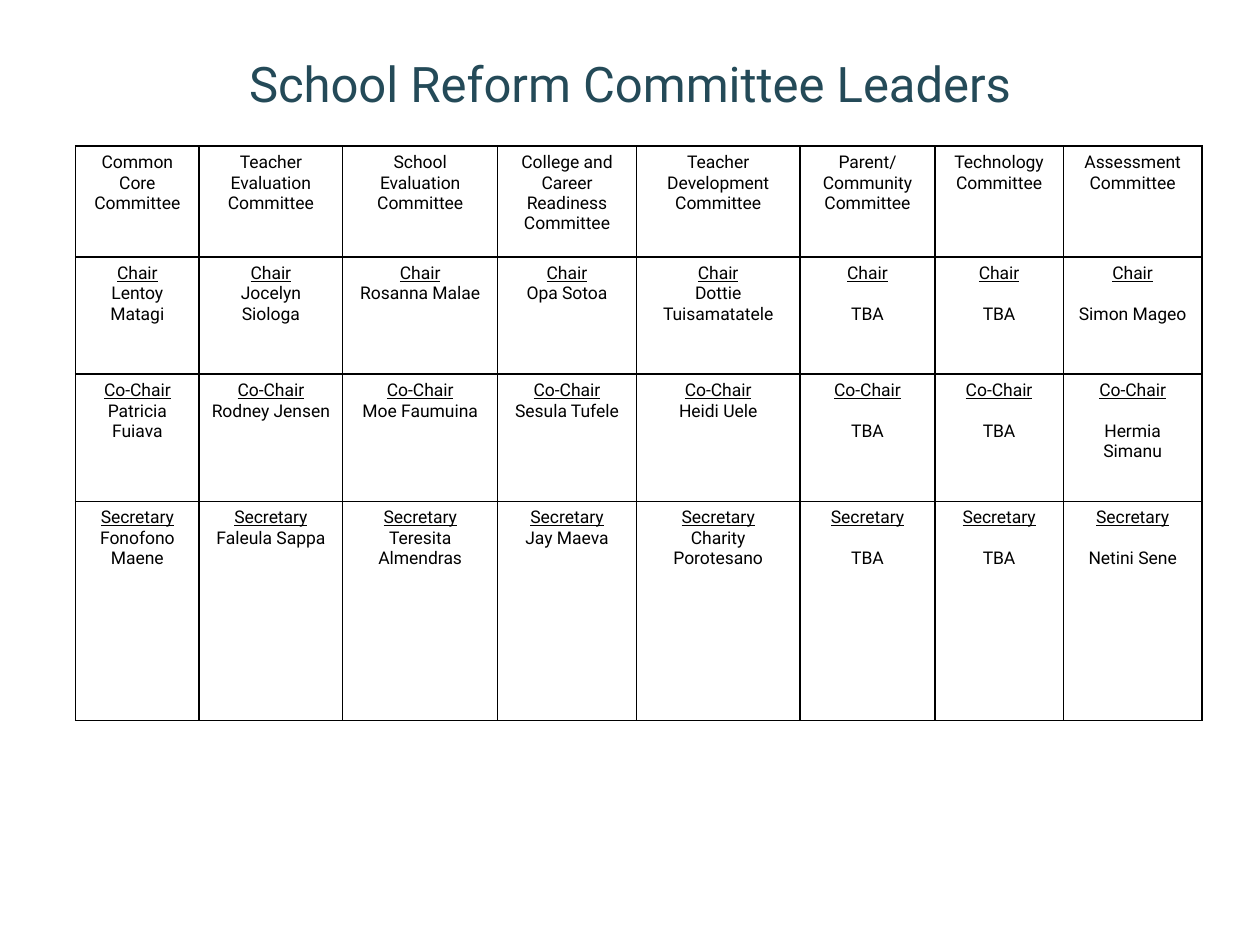
from dataclasses import dataclass

from lxml import etree
from pptx import Presentation
from pptx import util as u
from pptx.dml import color
from pptx.enum import text
from pptx.oxml import ns

FONT = "Roboto"
INK = "000000"
TEAL = "244A58"
WHITE = "FFFFFF"
LEFT, TOP = 0.6, 1.16
HEIGHTS = (0.88, 0.93, 1.01, 1.74)
ROLES = ("Chair", "Co-Chair", "Secretary")
GAP = 11.7


@dataclass
class Group:
    title: str
    width: float
    names: tuple[str, str, str]
    gap: float = 0


GROUPS = [
    Group("Common Core", 0.98, ("Lentoy Matagi", "Patricia Fuiava", "Fonofono Maene")),
    Group("Teacher Evaluation", 1.14, ("Jocelyn Siologa", "Rodney Jensen", "Faleula Sappa")),
    Group("School Evaluation", 1.23, ("Rosanna Malae", "Moe Faumuina", "Teresita Almendras")),
    Group("College and Career Readiness", 1.1, ("Opa Sotoa", "Sesula Tufele", "Jay Maeva")),
    Group("Teacher Development", 1.3, ("Dottie Tuisamatatele", "Heidi Uele", "Charity Porotesano")),
    Group("Parent/Community", 1.07, ("TBA", "TBA", "TBA"), GAP),
    Group("Technology", 1.02, ("TBA", "TBA", "TBA"), GAP),
    Group("Assessment", 1.1, ("Simon Mageo", "Hermia Simanu", "Netini Sene"), GAP),
]


def paint(item, shade: str) -> None:
    item.solid()
    item.fore_color.rgb = color.RGBColor.from_string(shade)


def style(para, size: float, shade: str, under: bool = False) -> None:
    para.alignment = text.PP_ALIGN.CENTER
    font = para.font
    font.name, font.size, font.underline = FONT, u.Pt(size), under
    paint(font.fill, shade)


def frame(cell) -> None:
    props = cell._tc.get_or_add_tcPr()
    for side in ("lnL", "lnR", "lnT", "lnB"):
        line = etree.SubElement(props, ns.qn(f"a:{side}"), w=str(u.Pt(1)))
        fill = etree.SubElement(line, ns.qn("a:solidFill"))
        etree.SubElement(fill, ns.qn("a:srgbClr"), val=INK)
    paint(cell.fill, WHITE)


def write(cell, lines: list[str], gap: float = 0) -> None:
    frame(cell)
    body = cell.text_frame
    body.text = "\n".join(lines)
    for para in body.paragraphs:
        style(para, 10, INK, para.text in ROLES)
    if gap:
        body.paragraphs[-1].space_before = u.Pt(gap)


def head(slide) -> None:
    title = slide.shapes.title
    title.left, title.top = u.Inches(0.6), u.Inches(0.12)
    title.width, title.height = u.Inches(8.8), u.Inches(0.82)
    body = title.text_frame
    body.text = "School Reform Committee Leaders"
    body.auto_size = text.MSO_AUTO_SIZE.NONE
    body.vertical_anchor = text.MSO_ANCHOR.BOTTOM
    style(body.paragraphs[0], 28, TEAL)


def grid(slide, groups: list[Group]) -> None:
    width = sum(group.width for group in groups)
    table = slide.shapes.add_table(
        len(HEIGHTS), len(groups), u.Inches(LEFT), u.Inches(TOP),
        u.Inches(width), u.Inches(sum(HEIGHTS))).table
    table.first_row = table.horz_banding = False
    for row, height in zip(table.rows, HEIGHTS):
        row.height = u.Inches(height)
    for col, group in enumerate(groups):
        table.columns[col].width = u.Inches(group.width)
        write(table.cell(0, col), [f"{group.title} Committee"])
        for row, (role, name) in enumerate(zip(ROLES, group.names), 1):
            write(table.cell(row, col), [role, name], group.gap)


def main() -> None:
    deck = Presentation()
    deck.slide_width, deck.slide_height = u.Inches(10), u.Inches(7.5)
    slide = deck.slides.add_slide(deck.slide_layouts[5])
    paint(slide.background.fill, WHITE)
    head(slide)
    grid(slide, GROUPS)
    deck.save("out.pptx")


if __name__ == "__main__":
    main()
